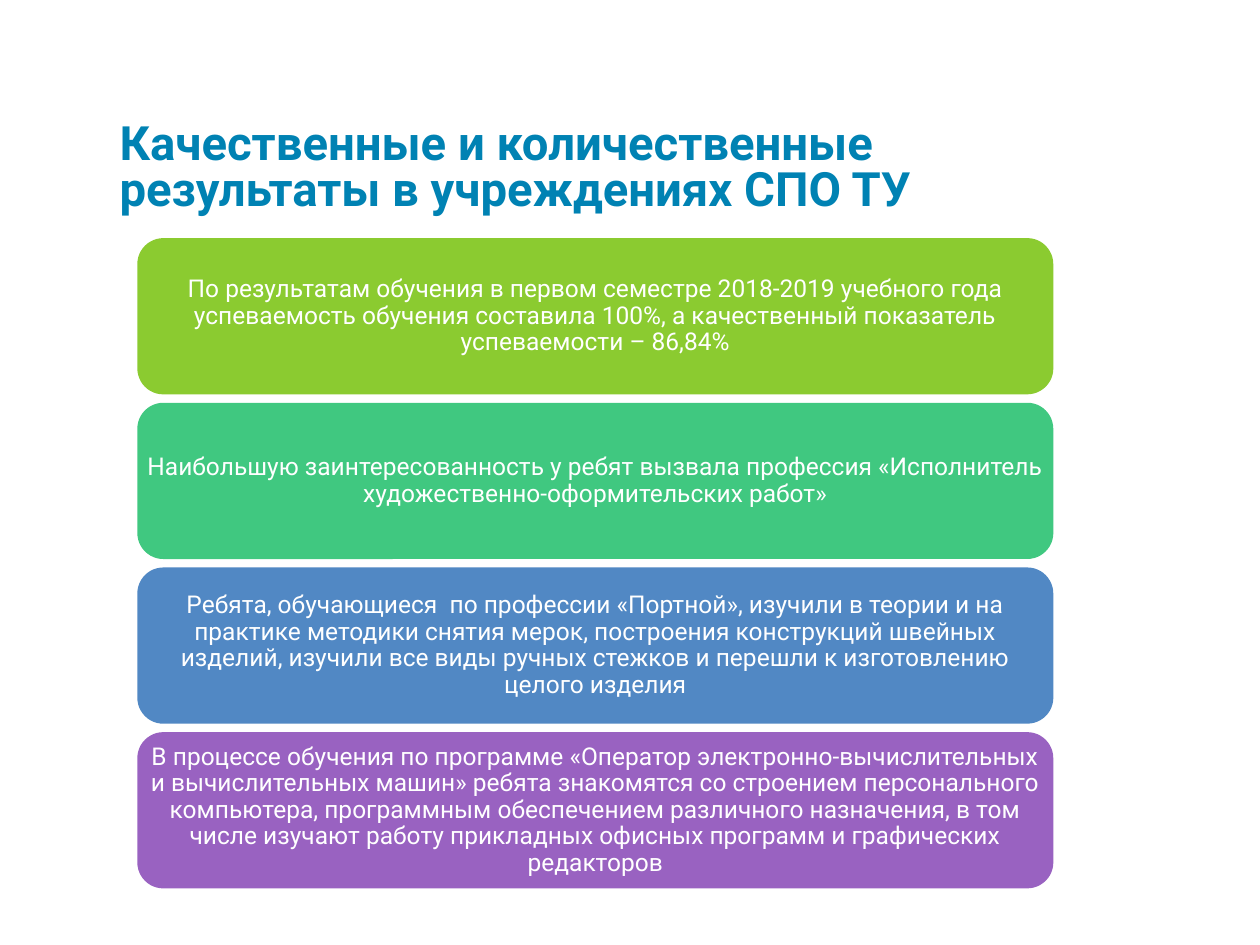
import pptx
import pptx.util
import pptx.dml.color
import pptx.enum.shapes
import pptx.enum.text

Inches = pptx.util.Inches


def color(value):
    return pptx.dml.color.RGBColor.from_string(value)


def add_text(tf, text, size, hex_color, spacing, bold=False):
    tf.word_wrap = True
    p = tf.paragraphs[0]
    p.line_spacing = spacing
    r = p.add_run()
    r.text = text
    r.font.name = "Roboto"
    r.font.size = pptx.util.Pt(size)
    r.font.bold = bold
    r.font.color.rgb = color(hex_color)
    return p


prs = pptx.Presentation()
prs.slide_width, prs.slide_height = Inches(10), Inches(7.5)
s = prs.slides.add_slide(prs.slide_layouts[6])

# Title
tf = s.shapes.add_textbox(Inches(0.87), Inches(0.58), Inches(7.13), Inches(1.17)).text_frame
tf.margin_left = tf.margin_right = Inches(0.08)
tf.margin_top = tf.margin_bottom = Inches(0.04)
tf.vertical_anchor = pptx.enum.text.MSO_ANCHOR.BOTTOM
add_text(tf, "Качественные и количественные результаты в учреждениях СПО ТУ",
         27, "0082B3", 0.8, bold=True)

# Result cards, stacked at an equal pitch
results = [
    ("8BCB30", "По результатам обучения в первом семестре 2018-2019 учебного года "
               "успеваемость обучения составила 100%, а качественный показатель "
               "успеваемости – 86,84%"),
    ("40C880", "Наибольшую заинтересованность у ребят вызвала профессия "
               "«Исполнитель художественно-оформительских работ»"),
    ("5188C4", "Ребята, обучающиеся  по профессии «Портной», изучили в теории и на "
               "практике методики снятия мерок, построения конструкций швейных "
               "изделий, изучили все виды ручных стежков и перешли к изготовлению "
               "целого изделия"),
    ("9962C1", "В процессе обучения по программе «Оператор электронно-вычислительных "
               "и вычислительных машин» ребята знакомятся со строением персонального "
               "компьютера, программным обеспечением различного назначения, в том "
               "числе изучают работу прикладных офисных программ и графических "
               "редакторов"),
]
top, pitch = 1.89, 1.307
for i, (fill, text) in enumerate(results):
    sp = s.shapes.add_shape(pptx.enum.shapes.MSO_SHAPE.ROUNDED_RECTANGLE,
                            Inches(1.09), Inches(top + i * pitch), Inches(7.27), Inches(1.24))
    sp.shadow.inherit = False
    sp.fill.solid()
    sp.fill.fore_color.rgb = color(fill)
    sp.line.fill.background()
    tf = sp.text_frame
    # The rounded corners already inset the text
    tf.margin_left = tf.margin_right = tf.margin_top = tf.margin_bottom = 0
    tf.vertical_anchor = pptx.enum.text.MSO_ANCHOR.MIDDLE
    p = add_text(tf, text, 14, "FFFFFF", 0.9)
    p.alignment = pptx.enum.text.PP_ALIGN.CENTER

prs.save("out.pptx")
